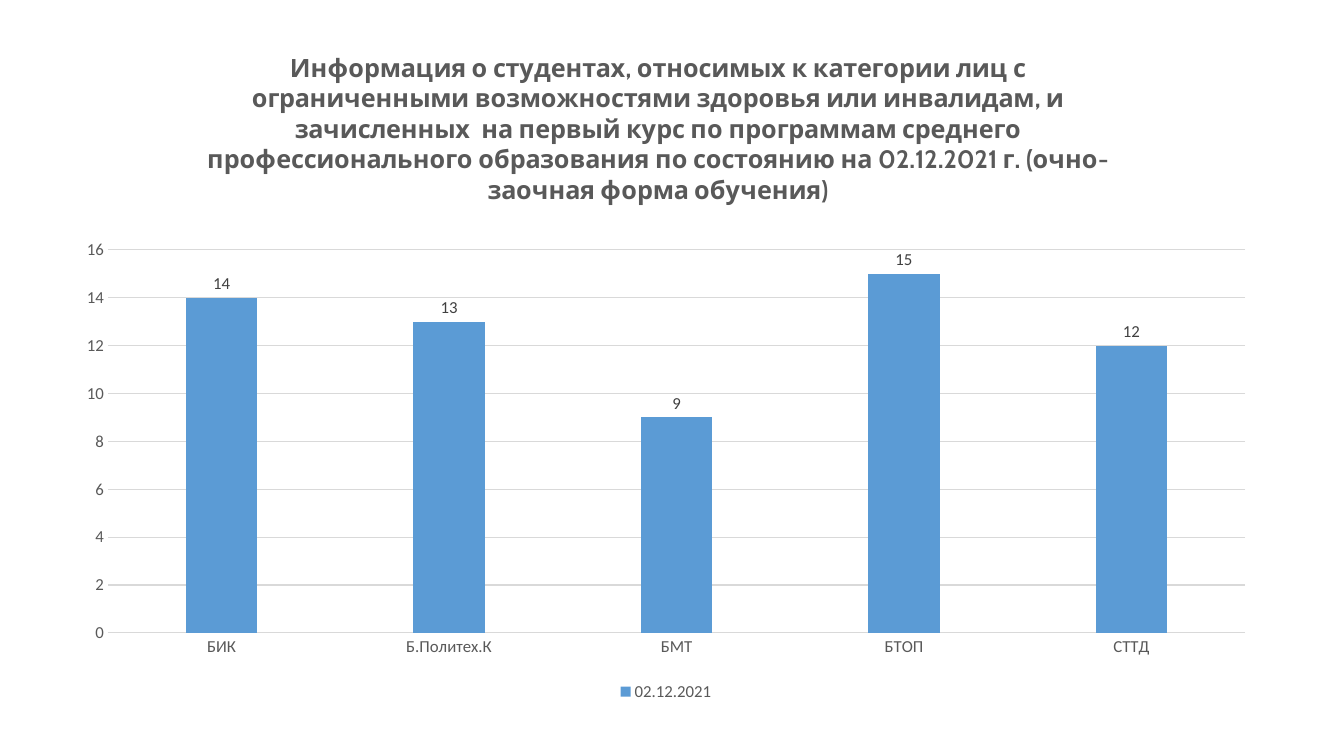
import lxml.etree
import pptx
import pptx.chart.data
import pptx.dml.color
import pptx.enum.chart
import pptx.oxml.ns
import pptx.util

TITLE = (
    "Информация о студентах, относимых к категории лиц с ограниченными "
    "возможностями здоровья или инвалидам, и зачисленных  на первый курс "
    "по программам среднего профессионального образования по состоянию "
    "на 02.12.2021 г. (очно-заочная форма обучения)"
)
SERIES = "02.12.2021"
STUDENTS = {"БИК": 14, "Б.Политех.К": 13, "БМТ": 9, "БТОП": 15, "СТТД": 12}
COLORS = {"bar": "5B9BD5", "text": "595959", "label": "404040", "line": "D9D9D9"}
CHART_BOX = (0.62, 0.45, 11.97, 6.55)
PLOT_BOX = (1.07, 2.48, 11.28, 3.8)
TITLE_POS = (2.01, 0.45)


def rgb(name):
    return pptx.dml.color.RGBColor.from_string(COLORS[name])


def set_font(font, size=12, color="text", name="Calibri", bold=False):
    font.name = name
    font.size = pptx.util.Pt(size)
    font.bold = bold
    font.color.rgb = rgb(color)


def set_line(fmt):
    fmt.line.color.rgb = rgb("line")
    fmt.line.width = pptx.util.Pt(0.75)


def place(parent, index, box, inner=False):
    qn = pptx.oxml.ns.qn
    for old in parent.findall(qn("c:layout")):
        parent.remove(old)
    left, top, width, height = CHART_BOX
    settings = [("layoutTarget", "inner")] if inner else []
    settings += [("xMode", "edge"), ("yMode", "edge")]
    shares = [(box[0] - left) / width, (box[1] - top) / height]
    shares += [size / full for size, full in zip(box[2:], (width, height))]
    settings += [(tag, f"{share:.4f}") for tag, share in zip("xywh", shares)]
    layout = lxml.etree.Element(qn("c:layout"))
    manual = lxml.etree.SubElement(layout, qn("c:manualLayout"))
    for tag, value in settings:
        lxml.etree.SubElement(manual, qn(f"c:{tag}")).set("val", value)
    parent.insert(index, layout)


def add_student_chart(s):
    data = pptx.chart.data.CategoryChartData()
    data.categories = list(STUDENTS)
    data.add_series(SERIES, list(STUDENTS.values()))
    box = [pptx.util.Inches(v) for v in CHART_BOX]
    kind = pptx.enum.chart.XL_CHART_TYPE.COLUMN_CLUSTERED
    return s.shapes.add_chart(kind, *box, data).chart


def format_title(chart):
    chart.has_title = True
    tf = chart.chart_title.text_frame
    tf.text = TITLE
    set_font(tf.paragraphs[0].runs[0].font, 18, name="Cabin", bold=True)
    chart.chart_title.include_in_layout = False
    place(chart.element.chart.find(pptx.oxml.ns.qn("c:title")), 1, TITLE_POS)


def format_axes(chart):
    for axis in (chart.category_axis, chart.value_axis):
        axis.major_tick_mark = pptx.enum.chart.XL_TICK_MARK.NONE
        axis.minor_tick_mark = pptx.enum.chart.XL_TICK_MARK.NONE
        set_font(axis.tick_labels.font)
    set_line(chart.category_axis.format)
    chart.value_axis.format.line.fill.background()
    chart.value_axis.has_major_gridlines = True
    set_line(chart.value_axis.major_gridlines.format)


def format_legend(chart):
    chart.has_legend = True
    chart.legend.position = pptx.enum.chart.XL_LEGEND_POSITION.BOTTOM
    chart.legend.include_in_layout = False
    set_font(chart.legend.font)


def format_bars(chart):
    plot = chart.plots[0]
    plot.vary_by_categories = False
    plot.gap_width = 219
    plot.overlap = -27
    bars = plot.series[0]
    bars.format.fill.solid()
    bars.format.fill.fore_color.rgb = rgb("bar")
    labels = bars.data_labels
    labels.show_value = True
    labels.position = pptx.enum.chart.XL_LABEL_POSITION.OUTSIDE_END
    set_font(labels.font, color="label")


def main():
    prs = pptx.Presentation()
    prs.slide_width = pptx.util.Inches(13.33)
    prs.slide_height = pptx.util.Inches(7.5)
    s = prs.slides.add_slide(prs.slide_layouts[6])
    chart = add_student_chart(s)
    chart.font.name = "Calibri"
    chart.font.size = pptx.util.Pt(10)
    format_title(chart)
    format_axes(chart)
    format_legend(chart)
    format_bars(chart)
    place(chart.element.chart.plotArea, 0, PLOT_BOX, inner=True)
    prs.save("out.pptx")


if __name__ == "__main__":
    main()
